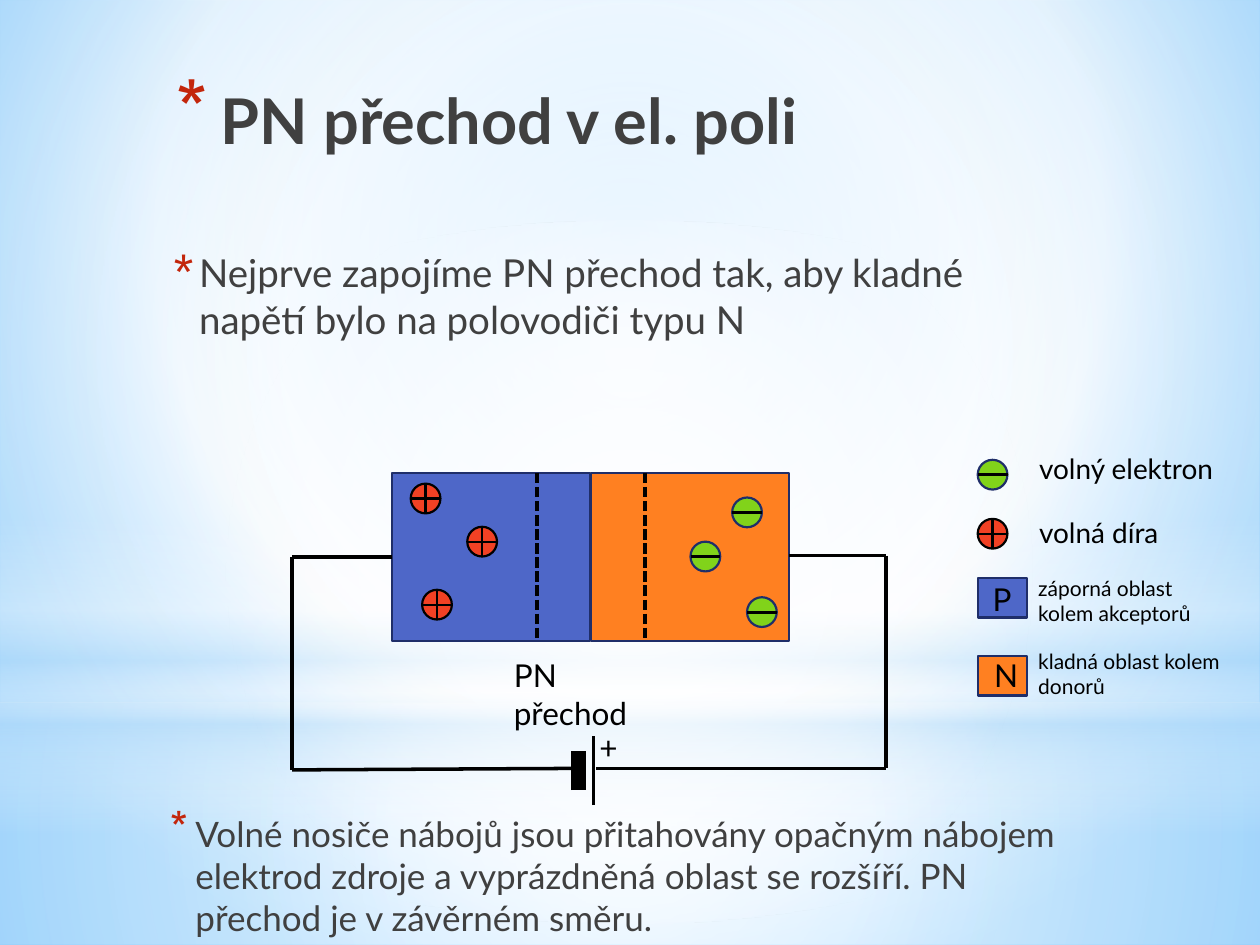
import lxml.etree
import pptx
import pptx.dml.color
import pptx.enum.dml
import pptx.enum.shapes
import pptx.enum.text
import pptx.oxml.ns
import pptx.util

Cm, Pt = pptx.util.Cm, pptx.util.Pt
RGB = pptx.dml.color.RGBColor.from_string
qn = pptx.oxml.ns.qn
SHAPE = pptx.enum.shapes.MSO_SHAPE

THEME = {
    "font": "Lato",
    "text": "404040", "black": "000000", "bullet": "C3260C",
    "p": "4E67C8", "n": "FF8021", "electron": "81D31A", "hole": "F14124",
    "outline": "1F2E69", "white": "FFFFFF", "haze": "B4DCFA",
    "sky_light": "9ED5FF", "sky": "5BB9FF",
    "title_size": 36, "body_size": 22, "note_size": 20,
    "label_size": 18, "legend_size": 16, "small_size": 12,
}


def write(shape, text, size, color="black", bold=False, wrap=True,
          bullet_size=None, left=0, hanging=0, after=0):
    """Fill a shape with one paragraph, bulleted if bullet_size (percent) is given."""
    frame = shape.text_frame
    frame.word_wrap = wrap
    frame.auto_size = pptx.enum.text.MSO_AUTO_SIZE.NONE
    frame.vertical_anchor = pptx.enum.text.MSO_ANCHOR.TOP
    paragraph = frame.paragraphs[0]
    paragraph.alignment = pptx.enum.text.PP_ALIGN.LEFT
    paragraph.space_before, paragraph.space_after = Pt(0), Pt(after)
    run = paragraph.add_run()
    run.text = text
    run.font.name, run.font.size, run.font.bold = THEME["font"], Pt(THEME[size]), bold
    run.font.color.rgb = RGB(THEME[color])
    if bullet_size:
        properties = paragraph._p.get_or_add_pPr()
        properties.set("marL", str(Cm(left)))
        properties.set("indent", str(-Cm(hanging)))
        bullet_color = lxml.etree.SubElement(properties, qn("a:buClr"))
        lxml.etree.SubElement(bullet_color, qn("a:srgbClr"), val=THEME["bullet"])
        lxml.etree.SubElement(properties, qn("a:buSzPct"), val=str(bullet_size * 1000))
        lxml.etree.SubElement(properties, qn("a:buChar"), char="*")


def apply_gradient(fill, element, stops, center=None):
    """Give a fill (position, color, alpha) stops; circular around center, else vertical."""
    fill.gradient()
    gradient = element.find(".//" + qn("a:gradFill"))
    for child in list(gradient):
        gradient.remove(child)
    stop_list = lxml.etree.SubElement(gradient, qn("a:gsLst"))
    for position, color, alpha in stops:
        stop = lxml.etree.SubElement(stop_list, qn("a:gs"), pos=str(position * 1000))
        value = lxml.etree.SubElement(stop, qn("a:srgbClr"), val=THEME[color])
        lxml.etree.SubElement(value, qn("a:alpha"), val=str(alpha * 1000))
    if center:
        circle = lxml.etree.SubElement(gradient, qn("a:path"), path="circle")
        sides = {side: str(share * 1000) for side, share in zip("ltrb", center)}
        lxml.etree.SubElement(circle, qn("a:fillToRect"), sides)
    else:
        lxml.etree.SubElement(gradient, qn("a:lin"), ang="5400000", scaled="0")


presentation = pptx.Presentation()
presentation.slide_width, presentation.slide_height = Cm(25.4), Cm(19.05)
slide = presentation.slides.add_slide(presentation.slide_layouts[1])
shapes = slide.shapes
title, body = slide.placeholders[0], slide.placeholders[1]

# Background and its hazy layers
apply_gradient(slide.background.fill, slide.element,
               [(0, "sky_light", 100), (60, "white", 100), (100, "sky", 100)],
               (20, 10, 20, 60))
MIDDLE = (50, 50, 50, 50)
layers = [
    (SHAPE.RECTANGLE, 14.17, 4.88, MIDDLE,
     [(0, "white", 91), (37, "white", 76), (100, "haze", 79)]),
    (SHAPE.RECTANGLE, 0, 14.17, MIDDLE,
     [(0, "white", 89), (48, "white", 62), (100, "haze", 79)]),
    (SHAPE.RECTANGLE, 10.46, 6.35, None,
     [(0, "white", 0), (29, "white", 30), (45, "haze", 40),
      (55, "white", 26), (65, "haze", 60), (100, "white", 0)]),
    (SHAPE.OVAL, 4.45, 14.17, MIDDLE, [(0, "white", 100), (56, "white", 0)]),
]
for index, (kind, top, height, center, stops) in enumerate(layers):
    layer = shapes.add_shape(kind, 0, Cm(top), presentation.slide_width, Cm(height))
    layer.shadow.inherit = False
    layer.line.fill.background()
    apply_gradient(layer.fill, layer._element, stops, center)
    title._element.addprevious(layer._element)  # keep the layers behind the text

# Title and list
title.left, title.top, title.width, title.height = Cm(3.3), Cm(1.52), Cm(18.08), Cm(3.18)
write(title, "PN přechod v el. poli", "title_size", "text", bold=True,
      bullet_size=128, left=0.89, hanging=0.89)
body.left, body.top, body.width, body.height = Cm(3.12), Cm(4.9), Cm(18.59), Cm(3)
write(body, "Nejprve zapojíme PN přechod tak, aby kladné napětí bylo na polovodiči typu N",
      "body_size", "text", bullet_size=130, left=0.64, hanging=0.51, after=3)

# Semiconductor blocks, charge carriers and legend keys
CARRIER = 0.6
electrons = [(15.06, 12.04), (14.76, 10.03), (13.92, 10.92), (19.71, 9.27)]
holes = [(8.51, 11.89), (9.42, 10.62), (8.28, 9.75), (19.71, 10.46)]
solids = [
    (SHAPE.RECTANGLE, 7.9, 9.53, 3.99, 3.4, "p", "outline"),
    (SHAPE.RECTANGLE, 11.91, 9.53, 3.99, 3.4, "n", "outline"),
    (SHAPE.FLOWCHART_PROCESS, 19.71, 11.66, 0.99, 0.79, "p", "outline"),
    (SHAPE.FLOWCHART_PROCESS, 19.71, 13.23, 0.99, 0.79, "n", "outline"),
]
solids += [(SHAPE.FLOWCHART_OR, x, y, CARRIER, CARRIER, "hole", "black") for x, y in holes]
solids += [(SHAPE.OVAL, x, y, CARRIER, CARRIER, "electron", "outline") for x, y in electrons]
for kind, left, top, width, height, color, outline in solids:
    solid = shapes.add_shape(kind, Cm(left), Cm(top), Cm(width), Cm(height))
    solid.shadow.inherit = False
    solid.fill.solid()
    solid.fill.fore_color.rgb = RGB(THEME[color])
    solid.line.color.rgb = RGB(THEME[outline])
    solid.line.width = Pt(1.25)

# Minus signs, depletion borders, wires and battery
lines = [(x, y + CARRIER / 2, x + CARRIER, y + CARRIER / 2, 1.75, False)
         for x, y in electrons]
lines += [(x, 9.53, x, 12.93, 2, True) for x in (13, 10.82)]
lines += [
    (7.9, 11.23, 5.89, 11.23, 2, False),
    (5.89, 11.23, 5.89, 15.52, 2, False),
    (17.86, 11.2, 15.9, 11.2, 2, False),
    (17.86, 11.2, 17.86, 15.49, 2, False),
    (5.89, 15.52, 11.58, 15.49, 2, False),
    (17.86, 15.49, 12.01, 15.49, 2, False),
    (11.66, 15.93, 11.66, 15.14, 8.75, False),
    (11.96, 16.23, 11.96, 14.83, 2, False),
]
for x1, y1, x2, y2, weight, dashed in lines:
    line = shapes.add_connector(pptx.enum.shapes.MSO_CONNECTOR.STRAIGHT,
                                Cm(x1), Cm(y1), Cm(x2), Cm(y2))
    line.line.color.rgb = RGB(THEME["black"])
    line.line.width = Pt(weight)
    if dashed:
        line.line.dash_style = pptx.enum.dml.MSO_LINE.SQUARE_DOT
    lxml.etree.SubElement(line._element.spPr, qn("a:effectLst"))

# Labels, legend and closing note
labels = [
    ("PN přechod", 10.11, 13.11, 3.5, 1.02, 0, {"size": "label_size"}),
    ("volný elektron", 20.7, 8.97, 4.22, 0.94, 0, {"size": "legend_size"}),
    ("volná díra", 20.7, 10.26, 4.22, 0.94, 0, {"size": "legend_size"}),
    ("záporná oblast kolem akceptorů", 20.68, 11.48, 4.22, 1.27, 0, {"size": "small_size"}),
    ("kladná oblast kolem donorů", 20.68, 12.95, 4.22, 1.27, 0, {"size": "small_size"}),
    ("P", 19.76, 11.56, 0.86, 1.02, 0, {"size": "label_size", "wrap": False}),
    ("N", 19.79, 13.11, 0.91, 1.02, 0, {"size": "label_size", "wrap": False}),
    ("+", 12.09, 14.63, 0.61, 1.02, 180, {"size": "label_size"}),
    ("Volné nosiče nábojů jsou přitahovány opačným nábojem elektrod zdroje "
     "a vyprázdněná oblast se rozšíří. PN přechod je v závěrném směru.",
     3.05, 16.26, 18.59, 2.57, 0,
     {"size": "note_size", "color": "text", "bullet_size": 130,
      "left": 0.64, "hanging": 0.51, "after": 3}),
]
for text, left, top, width, height, rotation, style in labels:
    label = shapes.add_textbox(Cm(left), Cm(top), Cm(width), Cm(height))
    label.rotation = rotation
    write(label, text, **style)

presentation.save("out.pptx")
